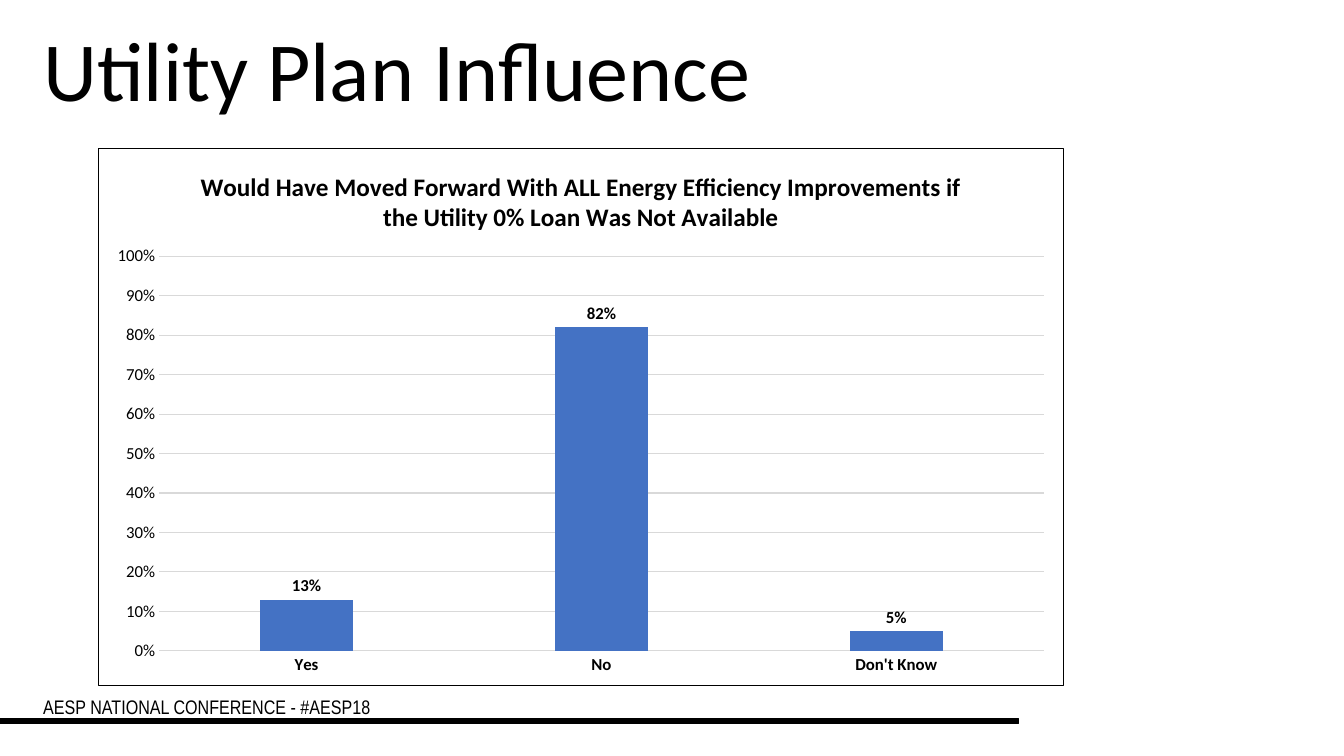
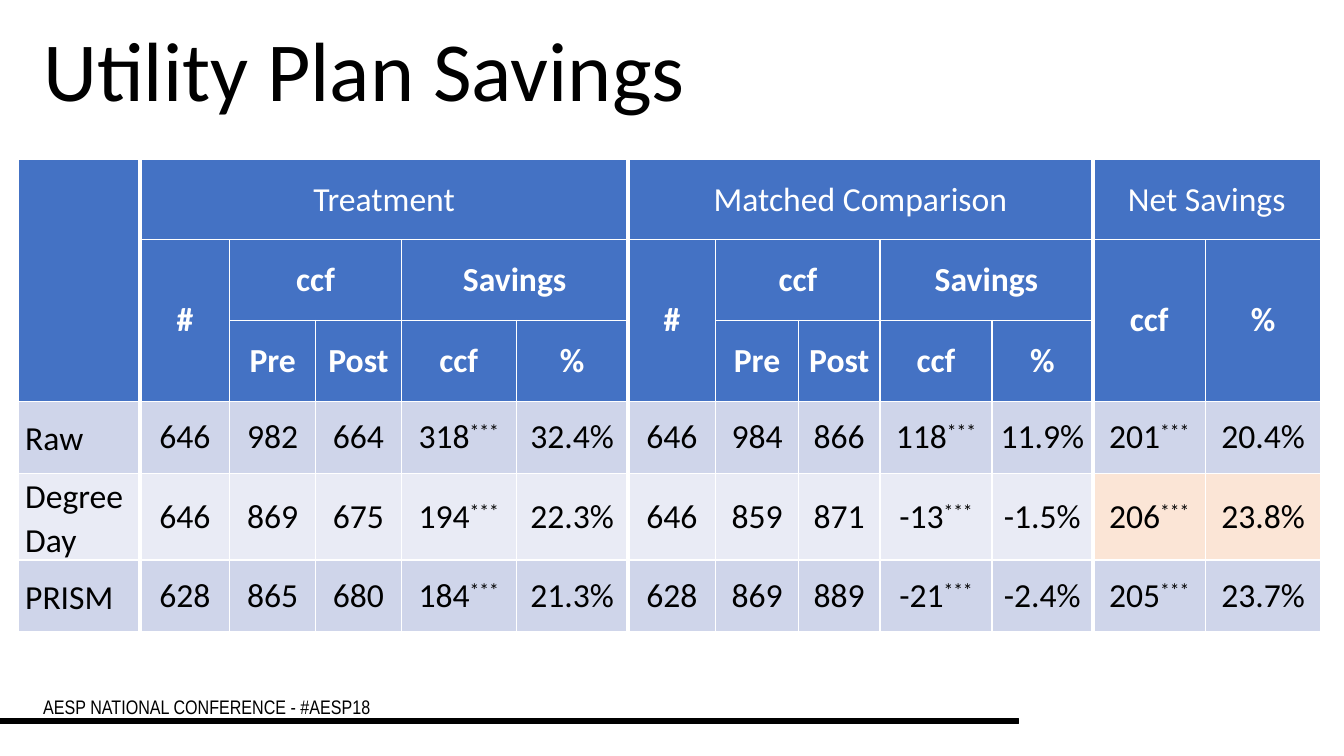
from lxml import etree
from pptx import Presentation
from pptx.chart.data import CategoryChartData
from pptx.dml.color import RGBColor
from pptx.enum.chart import XL_CHART_TYPE as CT, XL_LABEL_POSITION as LP, XL_TICK_MARK as TICK
from pptx.enum.shapes import MSO_SHAPE as SHAPE
from pptx.enum.text import MSO_ANCHOR as ANCHOR, MSO_AUTO_SIZE as AUTO, PP_ALIGN as ALIGN
from pptx.oxml import parse_xml
from pptx.oxml.ns import nsdecls, qn
from pptx.util import Pt

PX = 9144  # 100 px to the inch
BLACK = RGBColor(0x00, 0x00, 0x00)
WHITE = RGBColor(0xFF, 0xFF, 0xFF)
BLUE = RGBColor(0x44, 0x72, 0xC4)
BAND_DARK = RGBColor(0xCF, 0xD5, 0xEA)
BAND_LIGHT = RGBColor(0xE9, 0xEB, 0xF5)
PEACH = RGBColor(0xFB, 0xE5, 0xD6)
GRID = RGBColor(0xD9, 0xD9, 0xD9)
FONT = "Calibri"
FOOTER_FONT = "Arial Narrow"
STARS = "***"


def write(tf, text, size=24, font=FONT, color=BLACK, bold=False, align=ALIGN.LEFT, spacing=None):
    """Fill the first paragraph; trailing stars become superscript."""
    p = tf.paragraphs[0]
    p.alignment = align
    p.line_spacing = spacing
    body, stars, _ = text.partition(STARS)
    for part in filter(None, (body, stars)):
        r = p.add_run()
        r.text = part
        r.font.size, r.font.name, r.font.bold = Pt(size), font, bold
        r.font.color.rgb = color
        if part == STARS:
            r._r.get_or_add_rPr().set("baseline", "30000")


def add_page(title):
    """Add a slide with the shared bar, footer and title."""
    s = prs.slides.add_slide(prs.slide_layouts[6])
    bar = s.shapes.add_shape(SHAPE.RECTANGLE, 0, 713 * PX, 1010 * PX, 5 * PX)
    bar.shadow.inherit = False
    bar.fill.solid()
    bar.fill.fore_color.rgb = bar.line.color.rgb = BLACK
    bar.line.width = Pt(1)
    for text, size, font, top, width, height in (
            ("AESP NATIONAL CONFERENCE - #AESP18", 14, FOOTER_FONT, 684, 854, 34),
            (title, 60, FONT, 12, 898, 111)):
        tf = s.shapes.add_textbox(33 * PX, top * PX, width * PX, height * PX).text_frame
        tf.word_wrap = True
        tf.auto_size = AUTO.SHAPE_TO_FIT_TEXT
        write(tf, text, size=size, font=font)
    return s


prs = Presentation()
prs.slide_width, prs.slide_height = 1333 * PX, 750 * PX

# Influence: column chart
s = add_page("Utility Plan Influence")
data = CategoryChartData(number_format="0%")
data.categories = ["Yes", "No", "Don't Know"]
data.add_series("Series 1", (0.13, 0.82, 0.05))
chart = s.shapes.add_chart(CT.COLUMN_CLUSTERED, 97 * PX, 147 * PX, 958 * PX, 534 * PX, data).chart
chart.font.name, chart.font.size = FONT, Pt(10)
chart.font.color.rgb = BLACK
chart.has_legend = False
chart.has_title = True
write(chart.chart_title.text_frame,
      "Would Have Moved Forward With ALL Energy Efficiency Improvements if "
      "the Utility 0% Loan Was Not Available", size=18, bold=True, align=ALIGN.CENTER)

plot = chart.plots[0]
plot.gap_width, plot.overlap = 219, -27
plot.vary_by_categories = False
plot.has_data_labels = True
labels = plot.data_labels
labels.show_value = True
labels.position = LP.OUTSIDE_END
labels.number_format, labels.number_format_is_linked = "0%", False
columns = plot.series[0].format.fill
columns.solid()
columns.fore_color.rgb = BLUE

cat_axis, val_axis = chart.category_axis, chart.value_axis
for font, bold in ((labels.font, True), (cat_axis.tick_labels.font, True),
                   (val_axis.tick_labels.font, False)):
    font.name, font.size, font.bold = FONT, Pt(12), bold
    font.color.rgb = BLACK
for axis in (cat_axis, val_axis):
    axis.major_tick_mark = axis.minor_tick_mark = TICK.NONE
val_axis.minimum_scale, val_axis.maximum_scale, val_axis.major_unit = 0, 1, 0.1
val_axis.tick_labels.number_format = "0%"
val_axis.tick_labels.number_format_is_linked = False
val_axis.format.line.fill.background()
for line in (cat_axis.format.line, val_axis.major_gridlines.format.line):
    line.color.rgb = GRID
    line.width = Pt(0.75)

area = chart._chartSpace.find(qn("c:chart"))
area.addnext(parse_xml(
    f'<c:spPr {nsdecls("c", "a")}><a:solidFill><a:srgbClr val="{WHITE}"/></a:solidFill>'
    f'<a:ln w="{Pt(0.75)}"><a:solidFill><a:srgbClr val="{BLACK}"/></a:solidFill></a:ln></c:spPr>'))
plot_area = area.find(qn("c:plotArea"))
for old in plot_area.findall(qn("c:layout")):
    plot_area.remove(old)
layout = parse_xml(f'<c:layout {nsdecls("c")}><c:manualLayout/></c:layout>')
for tag, val in (("layoutTarget", "inner"), ("xMode", "edge"), ("yMode", "edge"),
                 ("x", "0.063"), ("y", "0.2"), ("w", "0.917"), ("h", "0.735")):
    etree.SubElement(layout[0], qn(f"c:{tag}")).set("val", val)
plot_area.insert(0, layout)

# Savings: results table
s = add_page("Utility Plan Savings")
COLS = (121, 89, 85, 85, 114, 111, 87, 82, 81, 111, 100, 112, 114)
ROWS = (80, 80, 80, 72, 72, 72)
HEADER_ROWS = 3
GROUP_STARTS = (1, 6, 11)
RESULTS = (
    ("Raw", "646", "982", "664", "318***", "32.4%",
     "646", "984", "866", "118***", "11.9%", "201***", "20.4%"),
    ("Degree Day", "646", "869", "675", "194***", "22.3%",
     "646", "859", "871", "-13***", "-1.5%", "206***", "23.8%"),
    ("PRISM", "628", "865", "680", "184***", "21.3%",
     "628", "869", "889", "-21***", "-2.4%", "205***", "23.7%"),
)
# row, column, rows spanned, columns spanned, text, bold
headers = [(0, 0, 3, 1, "", False), (0, 11, 1, 2, "Net Savings", False),
           (1, 11, 2, 1, "ccf", True), (1, 12, 2, 1, "%", True)]
for c, name in ((1, "Treatment"), (6, "Matched Comparison")):
    headers += [(0, c, 1, 5, name, False), (1, c, 2, 1, "#", True),
                (1, c + 1, 1, 2, "ccf", True), (1, c + 3, 1, 2, "Savings", True)]
    headers += [(2, c + i, 1, 1, text, True)
                for i, text in enumerate(("Pre", "Post", "ccf", "%"), 1)]

table = s.shapes.add_table(len(ROWS), len(COLS), 18 * PX, 158 * PX,
                           sum(COLS) * PX, sum(ROWS) * PX).table
table.first_row = table.horz_banding = False
for column, width in zip(table.columns, COLS):
    column.width = width * PX
for row, height in zip(table.rows, ROWS):
    row.height = height * PX

for r, c, down, across, text, bold in headers:
    cell = table.cell(r, c)
    if down * across > 1:
        cell.merge(table.cell(r + down - 1, c + across - 1))
    write(cell.text_frame, text, color=WHITE, bold=bold, align=ALIGN.CENTER)

for r, values in enumerate(RESULTS, HEADER_ROWS):
    for c, text in enumerate(values):
        cell = table.cell(r, c)
        cell.margin_left = cell.margin_right = 7 * PX
        cell.margin_top = cell.margin_bottom = 0
        if c == 0:
            write(cell.text_frame, text, spacing=1.07)
        else:
            write(cell.text_frame, text, align=ALIGN.CENTER)

for r in range(len(ROWS)):
    for c in range(len(COLS)):
        cell = table.cell(r, c)
        cell.vertical_anchor = ANCHOR.MIDDLE
        cell.fill.solid()
        if r < HEADER_ROWS:
            fill = BLUE
        elif r == 4:
            fill = PEACH if c >= 11 else BAND_LIGHT
        else:
            fill = BAND_DARK
        cell.fill.fore_color.rgb = fill
        borders = (("L", 3 if c in GROUP_STARTS else 1), ("R", 3 if c + 1 in GROUP_STARTS else 1),
                   ("T", 1), ("B", 2.25 if r == len(ROWS) - 1 else 1))
        for i, (side, width) in enumerate(borders):
            cell._tc.get_or_add_tcPr().insert(i, parse_xml(
                f'<a:ln{side} {nsdecls("a")} w="{Pt(width)}"><a:solidFill>'
                f'<a:srgbClr val="{WHITE}"/></a:solidFill></a:ln{side}>'))

prs.save("out.pptx")
